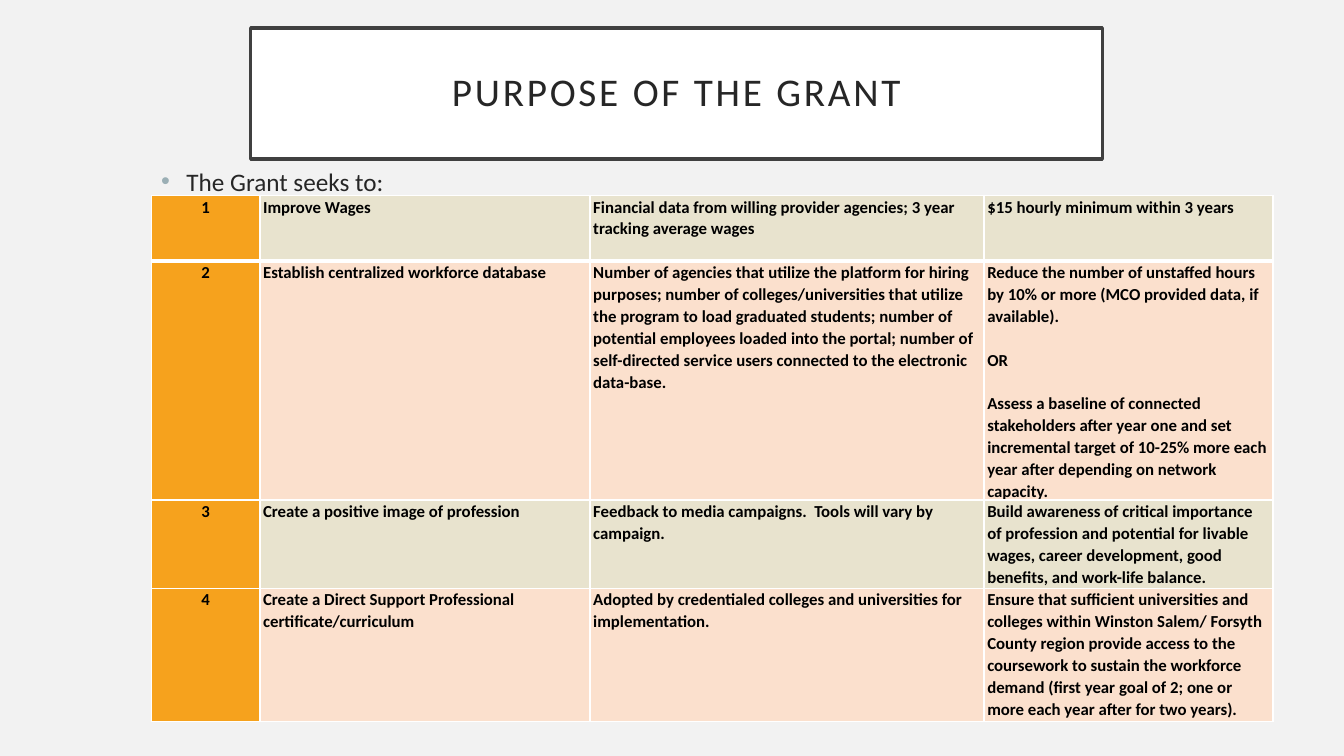
import pptx
import pptx.dml.color
import pptx.enum.shapes
import pptx.enum.text
import pptx.oxml
import pptx.oxml.ns
import pptx.util
from pptx.util import Cm, Pt

HEADING = "PURPOSE OF THE GRANT"
LEAD_IN = "The Grant seeks to:"

# One row per goal: number, goal, measure, target paragraphs
GOALS = [
    ("1", "Improve Wages",
     "Financial data from willing provider agencies; 3 year tracking average wages",
     "$15 hourly minimum within 3 years"),
    ("2", "Establish centralized workforce database",
     "Number of agencies that utilize the platform for hiring purposes; number of "
     "colleges/universities that utilize the program to load graduated students; "
     "number of potential employees loaded into the portal; number of self-directed "
     "service users connected to the electronic data-base.",
     "Reduce the number of unstaffed hours by 10% or more (MCO provided data, if "
     "available).\nOR\nAssess a baseline of connected stakeholders after year one and "
     "set incremental target of 10-25% more each year after depending on network capacity."),
    ("3", "Create a positive image of profession",
     "Feedback to media campaigns.  Tools will vary by campaign.",
     "Build awareness of critical importance of profession and potential for livable "
     "wages, career development, good benefits, and work-life balance."),
    ("4", "Create a Direct Support Professional certificate/curriculum",
     "Adopted by credentialed colleges and universities for implementation.",
     "Ensure that sufficient universities and colleges within Winston Salem/ Forsyth "
     "County region provide access to the coursework to sustain the workforce demand "
     "(first year goal of 2; one or more each year after for two years)."),
]
COLUMN_WIDTHS = [2.74, 8.32, 9.93, 7.28]
ROW_HEIGHTS = [1.65, 6.02, 2.23, 3.35]
NUMBER_FILL = "F6A21D"
BAND_FILLS = ["E8E3CE", "FBE0CD"]
FONT = "Calibri"


def color(hex_code):
    return pptx.dml.color.RGBColor.from_string(hex_code)


def format_runs(paragraph, size, hex_code, bold=False):
    for run in paragraph.runs:
        run.font.name = FONT
        run.font.size = Pt(size)
        run.font.bold = bold
        run.font.color.rgb = color(hex_code)


def add_xml(parent, index, markup):
    namespace = pptx.oxml.ns.nsdecls("a")
    parent.insert(index, pptx.oxml.parse_xml(markup.replace(" ", f" {namespace} ", 1)))


def set_borders(cell, bottom_width):
    widths = {"lnL": 1, "lnR": 1, "lnT": 1, "lnB": bottom_width}
    for index, (side, width) in enumerate(widths.items()):
        add_xml(cell._tc.get_or_add_tcPr(), index,
                f'<a:{side} w="{Pt(width)}"><a:solidFill><a:srgbClr val="FFFFFF"/>'
                f'</a:solidFill></a:{side}>')


def add_heading(slide):
    heading = slide.shapes.add_shape(pptx.enum.shapes.MSO_SHAPE.RECTANGLE,
                                     Cm(6.32), Cm(0.71), Cm(21.46), Cm(3.3))
    heading.shadow.inherit = False
    heading.fill.solid()
    heading.fill.fore_color.rgb = color("FFFFFF")
    heading.line.color.rgb = color("404040")
    heading.line.width = Pt(2.5)
    frame = heading.text_frame
    frame.text = HEADING
    frame.vertical_anchor = pptx.enum.text.MSO_ANCHOR.MIDDLE
    title = frame.paragraphs[0]
    title.alignment = pptx.enum.text.PP_ALIGN.CENTER
    title.line_spacing = 0.9
    format_runs(title, 28, "262626")
    title.runs[0].font._element.set("spc", "200")


def add_lead_in(slide):
    frame = slide.shapes.add_textbox(Cm(3.81), Cm(4.06), Cm(21.46), Cm(0.95)).text_frame
    frame.word_wrap = True
    frame.text = LEAD_IN
    bullet = frame.paragraphs[0]
    format_runs(bullet, 18, "262626")
    properties = bullet._p.get_or_add_pPr()
    properties.set("marL", str(Cm(0.64)))
    properties.set("indent", str(-Cm(0.64)))
    add_xml(properties, 0, '<a:buClr ><a:srgbClr val="9BAFB5"/></a:buClr>')
    add_xml(properties, 1, '<a:buFont typeface="Arial"/>')
    add_xml(properties, 2, '<a:buChar char="•"/>')


def fill_cell(cell, text, fill, centered, bottom_width):
    cell.margin_left = cell.margin_right = Cm(0.08)
    cell.margin_top = cell.margin_bottom = 0
    cell.fill.solid()
    cell.fill.fore_color.rgb = color(fill)
    set_borders(cell, bottom_width)
    cell.text_frame.text = text
    for paragraph in cell.text_frame.paragraphs:
        paragraph.line_spacing = 1.07
        if centered:
            paragraph.alignment = pptx.enum.text.PP_ALIGN.CENTER
        if paragraph.text == "OR":
            paragraph.space_before = paragraph.space_after = Pt(15.6)
        format_runs(paragraph, 12, "000000", bold=True)


def add_goals(slide):
    goals = slide.shapes.add_table(len(GOALS), len(COLUMN_WIDTHS), Cm(3.81), Cm(4.93),
                                   Cm(sum(COLUMN_WIDTHS)), Cm(sum(ROW_HEIGHTS))).table
    goals.first_row = goals.horz_banding = False
    for column, width in zip(goals.columns, COLUMN_WIDTHS):
        column.width = Cm(width)
    for r, (goal, height) in enumerate(zip(GOALS, ROW_HEIGHTS)):
        goals.rows[r].height = Cm(height)
        for c, text in enumerate(goal):
            fill = NUMBER_FILL if c == 0 else BAND_FILLS[r % 2]
            fill_cell(goals.cell(r, c), text, fill, c == 0, 3 if r == 0 else 1)


def main():
    deck = pptx.Presentation()
    deck.slide_width, deck.slide_height = Cm(33.87), Cm(19.05)
    slide = deck.slides.add_slide(deck.slide_layouts[6])
    slide.background.fill.solid()
    slide.background.fill.fore_color.rgb = color("F2F2F2")
    add_heading(slide)
    add_lead_in(slide)
    add_goals(slide)
    deck.save("out.pptx")


if __name__ == "__main__":
    main()
